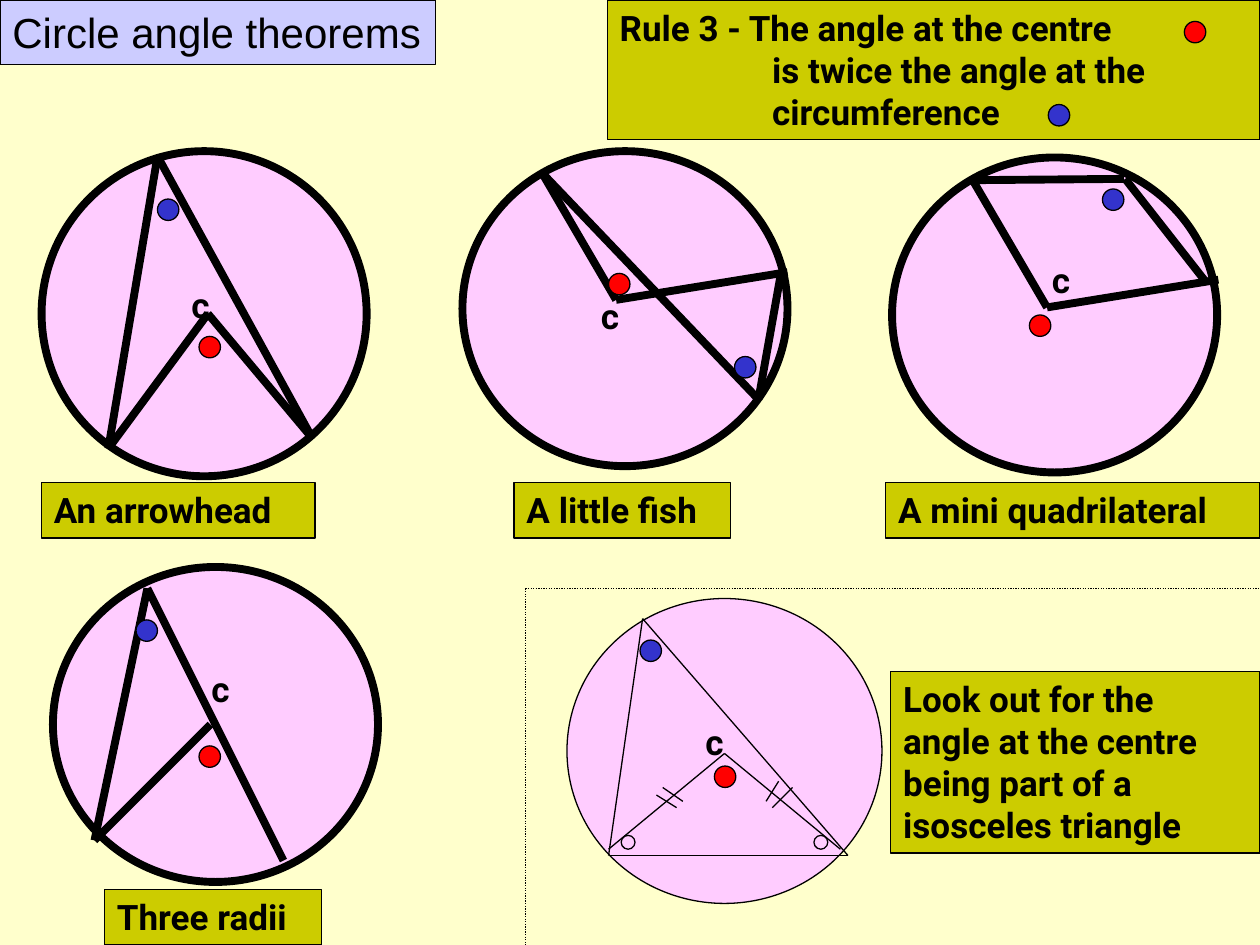
from dataclasses import dataclass

from lxml.etree import SubElement
from pptx import Presentation
from pptx.dml.color import RGBColor as RGB
from pptx.enum.dml import MSO_LINE as Dash
from pptx.enum.shapes import MSO_CONNECTOR as Link, MSO_SHAPE as Kind
from pptx.enum.text import MSO_ANCHOR as Anchor, PP_ALIGN as Align
from pptx.oxml.ns import qn
from pptx.util import Inches, Pt


@dataclass(frozen=True)
class Theme:
    paper: RGB = RGB(0xFF, 0xFF, 0xCC)
    title: RGB = RGB(0xCC, 0xCC, 0xFF)
    label: RGB = RGB(0xCC, 0xCC, 0x00)
    disc: RGB = RGB(0xFF, 0xCC, 0xFF)
    red: RGB = RGB(0xFF, 0x00, 0x00)
    blue: RGB = RGB(0x33, 0x33, 0xCC)
    ink: RGB = RGB(0, 0, 0)
    head: str = "Arial"
    body: str = "Roboto"
    big: int = 24
    size: int = 20
    thin: float = 0.75
    thick: float = 4.5
    dot: float = 0.17


T = Theme()


def add_form(shapes, kind, box, fill, width=T.thin):
    form = shapes.add_shape(kind, *map(Inches, box))
    form.shadow.inherit = False
    form.fill.solid()
    form.fill.fore_color.rgb = fill
    form.line.color.rgb = T.ink
    form.line.width = Pt(width)
    return form


def add_line(shapes, start, end, width=T.thin, dash=None):
    line = shapes.add_connector(Link.STRAIGHT, *map(Inches, (*start, *end)))
    line.line.color.rgb = T.ink
    line.line.width = Pt(width)
    if dash:
        line.line.dash_style = dash
    SubElement(line._element.spPr, qn("a:effectLst"))


def set_text(shape, text, font=T.body, size=T.size, bold=True):
    frame = shape.text_frame
    frame.word_wrap = True
    frame.margin_right = 0
    frame.vertical_anchor = Anchor.TOP
    frame.text = text
    for para in frame.paragraphs:
        para.alignment = Align.LEFT
        for run in para.runs:
            run.font.name = font
            run.font.size = Pt(size)
            run.font.bold = bold
            run.font.color.rgb = T.ink


def add_label(shapes, box, text, fill=T.label, **style):
    label = add_form(shapes, Kind.RECTANGLE, box, fill)
    set_text(label, text, **style)
    return label


def add_dot(shapes, x, y, fill, size=T.dot):
    add_form(shapes, Kind.OVAL, (x, y, size, size), fill)


# Rule text with its two colour keys
def add_rule(slide, box):
    x, y, *_ = box
    shapes = slide.shapes.add_group_shape().shapes
    label = add_label(shapes, box, "Rule 3 - The angle at the centre\n"
                      "is twice the angle at the\ncircumference")
    for para in label.text_frame.paragraphs[1:]:
        para._p.get_or_add_pPr().set("marL", str(Inches(1.21)))
    add_dot(shapes, x + 4.58, y + 0.17, T.red)
    add_dot(shapes, x + 3.5, y + 0.83, T.blue)


# Circle with chords, centre letter and angle dots, all relative to its box
def add_circle(slide, box, paths, c, red, blue, width=T.thick, rings=()):
    x, y, *_ = box
    shapes = slide.shapes.add_group_shape().shapes
    add_form(shapes, Kind.OVAL, box, T.disc, width)
    for path in paths:
        spots = [(x + px, y + py) for px, py in path]
        for start, end in zip(spots, spots[1:]):
            add_line(shapes, start, end, width)
    for rx, ry in rings:
        add_dot(shapes, x + rx, y + ry, T.disc, 0.11)
    spot = (x + c[0], y + c[1], 0.35, 0.43)
    set_text(shapes.add_textbox(*map(Inches, spot)), "c")
    add_dot(shapes, x + red[0], y + red[1], T.red)
    add_dot(shapes, x + blue[0], y + blue[1], T.blue)


# Dotted corner that sets the hint apart
def add_corner(slide, box):
    x, y, w, h = box
    for end in ((x, y + h), (x + w, y)):
        add_line(slide.shapes, (x, y), end, dash=Dash.ROUND_DOT)


# Isosceles hint: thin circle, equal-side ticks and base angles
def add_hint(slide, box):
    x, y, *_ = box
    add_corner(slide, box)
    add_label(slide.shapes, (x + 2.9, y + 0.66, 2.93, 1.44),
              "Look out for the\nangle at the centre\n"
              "being part of a\nisosceles triangle")
    radii = [(0.33, 1.99), (1.25, 1.23), (2.17, 1.99)]
    chords = [(0.33, 2.04), (0.6, 0.16), (2.23, 2.04), (0.33, 2.04)]
    ticks = [[(0.71, 1.56), (0.87, 1.66)], [(0.76, 1.5), (0.92, 1.61)],
             [(1.68, 1.45), (1.58, 1.61)], [(1.79, 1.5), (1.63, 1.66)]]
    add_circle(slide, (x + 0.33, y + 0.08, 2.5, 2.42),
               [radii, chords, *ticks], (1, 0.92), (1.17, 1.33),
               (0.58, 0.33), T.thin, [(0.43, 1.88), (1.96, 1.88)])


# Each case: caption, caption box, circle box, paths, c, red, blue
CASES = [
    ("An arrowhead", (0.33, 3.83, 2.17, 0.44), (0.33, 1.2, 2.58, 2.58),
     [[(0.53, 2.36), (1.32, 1.29), (2.15, 2.28), (0.92, 0.04), (0.53, 2.36)]],
     (1.09, 1), (1.25, 1.47), (0.92, 0.38)),
    ("A little fish", (4.08, 3.83, 1.72, 0.44), (3.67, 1.2, 2.58, 2.5),
     [[(0.63, 0.17), (1.22, 1.18), (2.58, 0.96)],
      [(0.63, 0.17), (2.35, 1.97), (2.53, 0.96)]],
     (1, 1.09), (1.16, 0.97), (2.16, 1.63)),
    ("A mini quadrilateral", (7.03, 3.83, 2.97, 0.44),
     (7.08, 1.25, 2.58, 2.5),
     [[(0.64, 0.18), (1.23, 1.19), (2.59, 0.97)],
      [(0.64, 0.18), (1.84, 0.17)], [(1.85, 0.17), (2.5, 1)]],
     (1.17, 0.75), (1.09, 1.25), (1.67, 0.25)),
    ("Three radii", (0.83, 7.06, 1.72, 0.44), (0.42, 4.5, 2.58, 2.5),
     [[(1.83, 2.33), (0.75, 0.17), (0.33, 2.17)],
      [(0.33, 2.17), (1.25, 1.25)]],
     (1.16, 0.75), (1.16, 1.42), (0.66, 0.42)),
]


def main():
    deck = Presentation()
    deck.slide_width, deck.slide_height = Inches(10), Inches(7.5)
    slide = deck.slides.add_slide(deck.slide_layouts[6])
    slide.background.fill.solid()
    slide.background.fill.fore_color.rgb = T.paper

    add_label(slide.shapes, (0, 0, 3.46, 0.51), "Circle angle theorems",
              T.title, font=T.head, size=T.big, bold=False)
    add_rule(slide, (4.82, 0, 5.18, 1.11))
    for text, label, circle, *parts in CASES:
        add_label(slide.shapes, label, text)
        add_circle(slide, circle, *parts)
    add_hint(slide, (4.17, 4.67, 5.83, 2.83))
    deck.save("out.pptx")


if __name__ == "__main__":
    main()
